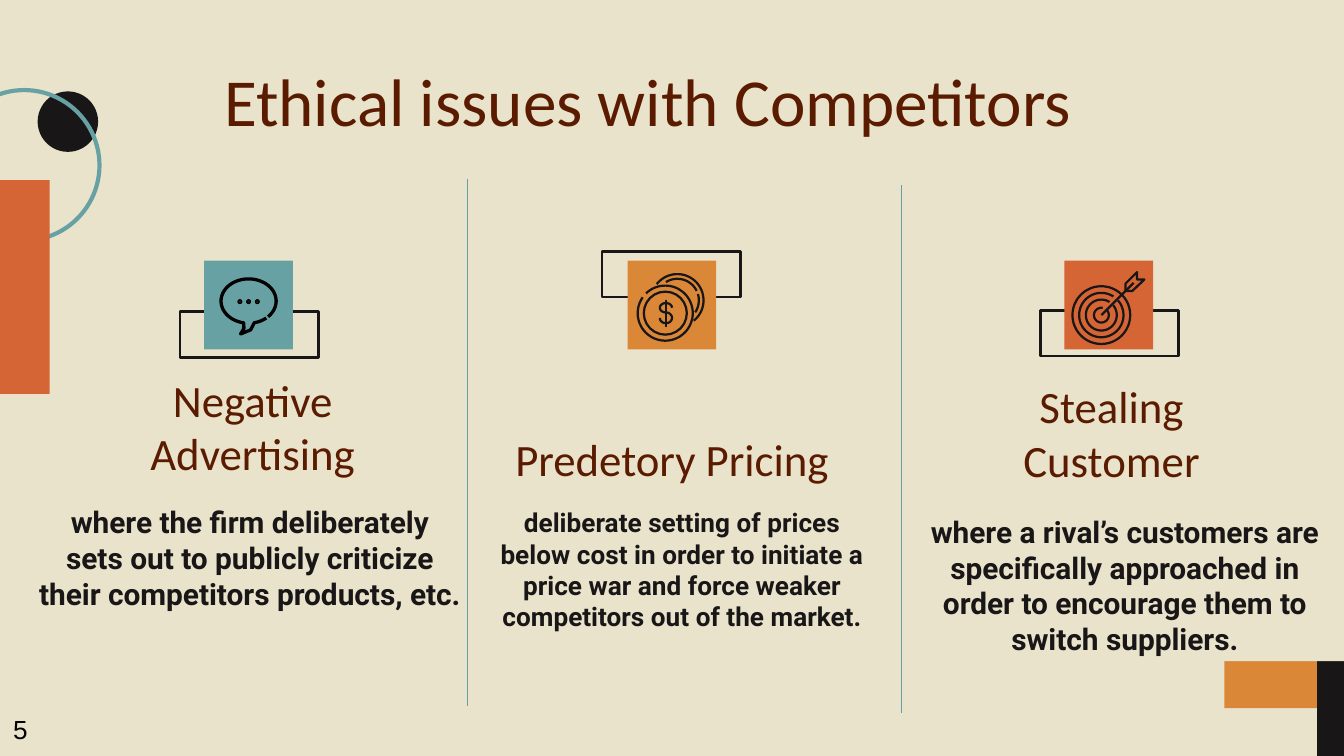
import math
import pptx
import pptx.dml.color
import pptx.enum.shapes
import pptx.enum.text
import pptx.oxml.ns
import pptx.util
from lxml import etree

PX = 4572  # EMU in one px, 200 px to the inch
TILE = 132
HUES = {
    "sand": "E9E3CB", "ink": "191617", "black": "000000", "brown": "5A1B00",
    "teal": "68A1A4", "rule": "649FA2", "gold": "DA8737", "rust": "D56534",
}
KINDS = pptx.enum.shapes.MSO_SHAPE
ALIGN = pptx.enum.text.PP_ALIGN
ANCHOR = pptx.enum.text.MSO_ANCHOR


def emu(*nums):
    return [round(n * PX) for n in nums]


def hue(name):
    return pptx.dml.color.RGBColor.from_string(HUES[name])


def paint(shape, fill=None, line=None, width=1.5):
    shape.shadow.inherit = False
    if fill:
        shape.fill.solid()
        shape.fill.fore_color.rgb = hue(fill)
    else:
        shape.fill.background()
    if line:
        shape.line.color.rgb = hue(line)
        shape.line.width = pptx.util.Pt(width)
    else:
        shape.line.fill.background()


def block(slide, box, kind=KINDS.RECTANGLE, **look):
    paint(slide.shapes.add_shape(kind, *emu(*box)), **look)


def ring(slide, x, y, r, **look):
    """Draw a circle of radius r around x, y."""
    block(slide, (x - r, y - r, 2 * r, 2 * r), KINDS.OVAL, **look)


def arc(x, y, rx, ry, start, end):
    """Return points on an ellipse; degrees grow clockwise from the right."""
    count = max(2, math.ceil(abs(end - start) / 5))
    turns = [math.radians(start + (end - start) * i / count) for i in range(count + 1)]
    return [(x + rx * math.cos(t), y + ry * math.sin(t)) for t in turns]


def trace(slide, x, y, points, close=False, **look):
    """Draw an outline through points that are relative to x, y."""
    spots = [emu(x + a, y + b) for a, b in points]
    pen = slide.shapes.build_freeform(*spots[0], scale=1.0)
    pen.add_line_segments(spots[1:], close=close)
    paint(pen.convert_to_shape(), **look)


def rule(slide, ends, color, width):
    line = slide.shapes.add_connector(
        pptx.enum.shapes.MSO_CONNECTOR.STRAIGHT, *emu(*ends))
    line.line.color.rgb = hue(color)
    line.line.width = pptx.util.Pt(width)
    etree.SubElement(line._element.spPr, pptx.oxml.ns.qn("a:effectLst"))


def write(slide, box, text, size, font="Calibri", color="brown", bold=False,
          align=ALIGN.CENTER, anchor=ANCHOR.TOP, pad=(20, 20), fill=None, after=0):
    shape = slide.shapes.add_textbox(*emu(*box))
    if fill:
        shape.fill.solid()
        shape.fill.fore_color.rgb = hue(fill)
    frame = shape.text_frame
    frame.word_wrap = True
    frame.vertical_anchor = anchor
    frame.margin_left = frame.margin_right = emu(pad[0])[0]
    frame.margin_top = frame.margin_bottom = emu(pad[1])[0]
    para = frame.paragraphs[0]
    para.alignment = align
    para.space_after = pptx.util.Pt(after)
    run = para.add_run()
    run.text = text
    run.font.name = font
    run.font.size = pptx.util.Pt(size)
    run.font.bold = bold
    run.font.color.rgb = hue(color)


def speech(slide, x, y):
    tail = [(69, 103), (54, 109), (59, 101)]
    edge = arc(66, 60, 41, 33, 50, 78) + tail + arc(66, 60, 41, 33, 100, 405)
    trace(slide, x, y, edge, line="black", width=1.75)
    for mid in (53, 66, 79):
        ring(slide, x + mid, y + 61, 3, fill="ink", line="black", width=0.5)


def coins(slide, x, y):
    look = {"line": "ink", "width": 1.2}
    ring(slide, x + 56, y + 78, 32, **look)
    curves = [
        arc(56, 78, 41, 41, -134, 215),
        arc(74, 59, 39, 39, -142, 51),
        arc(74, 59, 32, 32, -17, 34),
        arc(74, 59, 32, 32, -122, -26),
        arc(57, 70, 9, 7, 0, -270) + arc(57, 85, 9, 8, -90, 180),
    ]
    for curve in curves:
        trace(slide, x, y, curve, **look)
    rule(slide, (x + 57, y + 58, x + 57, y + 98), "ink", 1.2)


def target(slide, x, y):
    look = {"line": "ink", "width": 1.2}
    ring(slide, x + 55, y + 81, 43, **look)
    for r, start, end in ((33, -41, 303), (23, -40, 302), (11, -38, 280)):
        trace(slide, x, y, arc(55, 81, r, r, start, end), **look)
    rule(slide, (x + 55, y + 81, x + 103, y + 33), "ink", 1.2)
    vane = [(91, 45), (91, 34), (108, 17), (108, 28), (119, 28), (101, 45)]
    trace(slide, x, y, vane, close=True, **look)


def decor(slide):
    ring(slide, 101, 181, 45, fill="ink")
    ring(slide, 36, 246, 112, line="teal", width=2.25)
    block(slide, (1822, 928, 180, 126), fill="gold")
    block(slide, (1960, 950, 44, 182), fill="ink")
    block(slide, (-106, 268, 180, 318), fill="rust")


def issue(slide, x, y, frame, head, body, color, icon, size, fill=None):
    """Place one issue; its parts are relative to the tile corner x, y."""
    def shift(box):
        return (x + box[0], y + box[1], *box[2:])

    block(slide, shift((*frame, 206, 68)), line="ink")
    write(slide, shift(head[0]), head[1], 24, anchor=ANCHOR.BOTTOM)
    write(slide, shift(body[0]), body[1], size, font="Roboto", color="ink",
          bold=True, fill=fill, after=16)
    block(slide, (x, y, TILE, TILE), fill=color)
    icon(slide, x, y)


def main():
    deck = pptx.Presentation()
    deck.slide_width, deck.slide_height = emu(2000, 1125)
    slide = deck.slides.add_slide(deck.slide_layouts[6])
    slide.background.fill.solid()
    slide.background.fill.fore_color.rgb = hue("sand")

    decor(slide)
    write(slide, (186, 68, 1556, 160), "Ethical issues with Competitors", 36)
    issue(slide, 304, 388, (-36, 76),
          ((-122, 220, 388, 126), "Negative Advertising"),
          ((-266, 342, 668, 240), "where the firm deliberately sets out to publicly "
           "criticize their competitors products, etc."),
          "teal", speech, 16)
    issue(slide, 934, 388, (-38, -14),
          ((-192, 228, 516, 126), "Predetory Pricing"),
          ((-226, 346, 614, 378), "deliberate setting of prices below cost in order to "
           "initiate a price war and force weaker competitors out of the market."),
          "gold", coins, 14)
    issue(slide, 1584, 388, (-36, 74),
          ((-124, 230, 388, 126), "Stealing Customer"),
          ((-242, 356, 664, 240), "where a rival’s customers are specifically approached "
           "in order to encourage them to switch suppliers."),
          "rust", target, 16, fill="sand")
    for x, top in ((696, 266), (1342, 276)):
        rule(slide, (x, top, x, top + 785), "rule", 0.75)
    write(slide, (0, 1052, 86, 68), "5", 14, font="Arial", color="black",
          align=ALIGN.LEFT, pad=(20, 10))
    deck.save("out.pptx")


if __name__ == "__main__":
    main()
